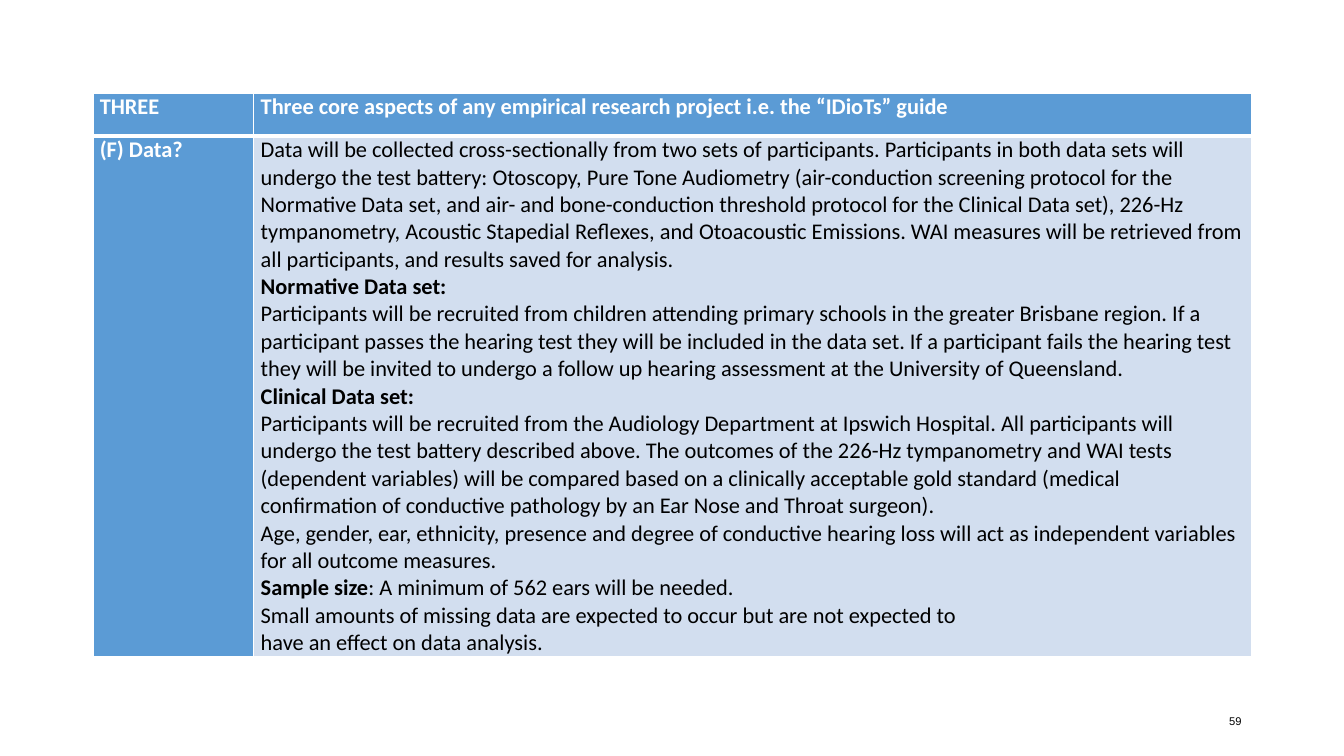
from lxml.etree import SubElement
from pptx import Presentation
from pptx.dml.color import RGBColor
from pptx.enum.text import MSO_ANCHOR as Anchor, PP_ALIGN as Align
from pptx.oxml.ns import qn
from pptx.util import Pt

BLUE, PALE, WHITE, BLACK = "5B9BD5", "D2DEEF", "FFFFFF", "000000"


def paint(fill, color):
    fill.solid()
    fill.fore_color.rgb = RGBColor.from_string(color)


def edge(cell, side, width):
    """Draw a white border on one side (L, R, T or B) of a cell."""
    line = SubElement(cell._tc.get_or_add_tcPr(), qn(f"a:ln{side}"), w=str(Pt(width)))
    fill = SubElement(line, qn("a:solidFill"))
    SubElement(fill, qn("a:srgbClr"), val=WHITE)


# Each paragraph is a list of (text, bold) runs
head = [[("THREE", True)]]
title = [[("Three core aspects of any empirical research project i.e. the “IDioTs” guide", True)]]
label = [[("(F) Data?", True)]]
body = [
    [("Data will be collected cross-sectionally from two sets of participants. "
      "Participants in both data sets will undergo the test battery: Otoscopy, "
      "Pure Tone Audiometry (air-conduction screening protocol for the Normative Data set, "
      "and air- and bone-conduction threshold protocol for the Clinical Data set), "
      "226-Hz tympanometry, Acoustic Stapedial Reflexes, and Otoacoustic Emissions. "
      "WAI measures will be retrieved from all participants, and results saved for analysis.", False)],
    [("Normative Data set:", True)],
    [("Participants will be recruited from children attending primary schools in the greater "
      "Brisbane region. If a participant passes the hearing test they will be included in the "
      "data set. If a participant fails the hearing test they will be invited to undergo a "
      "follow up hearing assessment at the University of Queensland.", False)],
    [("Clinical Data set:", True)],
    [("Participants will be recruited from the Audiology Department at Ipswich Hospital. "
      "All participants will undergo the test battery described above. The outcomes of the "
      "226-Hz tympanometry and WAI tests (dependent variables) will be compared based on a "
      "clinically acceptable gold standard (medical", False)],
    [("confirmation of conductive pathology by an Ear Nose and Throat surgeon).", False)],
    [("Age, gender, ear, ethnicity, presence and degree of conductive hearing loss will act as "
      "independent variables for all outcome measures.", False)],
    [("Sample size", True), (": A minimum of 562 ears will be needed.", False)],
    [("Small amounts of missing data are expected to occur but are not expected to", False)],
    [("have an effect on data analysis.", False)],
]

deck = Presentation()
deck.slide_width, deck.slide_height = Pt(960), Pt(540)
slide = deck.slides.add_slide(deck.slide_layouts[6])

# Table
table = slide.shapes.add_table(2, 2, Pt(66.4), Pt(66.4), Pt(828), Pt(395)).table
table.columns[0].width, table.columns[1].width = Pt(115), Pt(713)
table.rows[0].height, table.rows[1].height = Pt(31), Pt(364)

cells = [
    (0, 0, head, BLUE, WHITE),
    (0, 1, title, BLUE, WHITE),
    (1, 0, label, BLUE, WHITE),
    (1, 1, body, PALE, BLACK),
]
for row, col, paras, back, ink in cells:
    cell = table.cell(row, col)
    cell.margin_left = cell.margin_right = Pt(4.9)
    cell.margin_top = cell.margin_bottom = 0
    for side in "LRTB":
        thick = (row, side) in [(0, "B"), (1, "T")]
        edge(cell, side, 3 if thick else 1)
    paint(cell.fill, back)
    frame = cell.text_frame
    for i, parts in enumerate(paras):
        para = frame.add_paragraph() if i else frame.paragraphs[0]
        for text, bold in parts:
            run = para.add_run()
            run.text = text
            run.font.name, run.font.size, run.font.bold = "Calibri", Pt(16), bold
            paint(run.font.fill, ink)

# Slide number
box = slide.shapes.add_textbox(Pt(678), Pt(500.5), Pt(216), Pt(28.75))
frame = box.text_frame
frame.word_wrap = True
frame.vertical_anchor = Anchor.MIDDLE
frame.text = "59"
para = frame.paragraphs[0]
para.alignment = Align.RIGHT
font = para.runs[0].font
font.name, font.size = "Arial", Pt(8)
paint(font.fill, BLACK)

deck.save("out.pptx")
